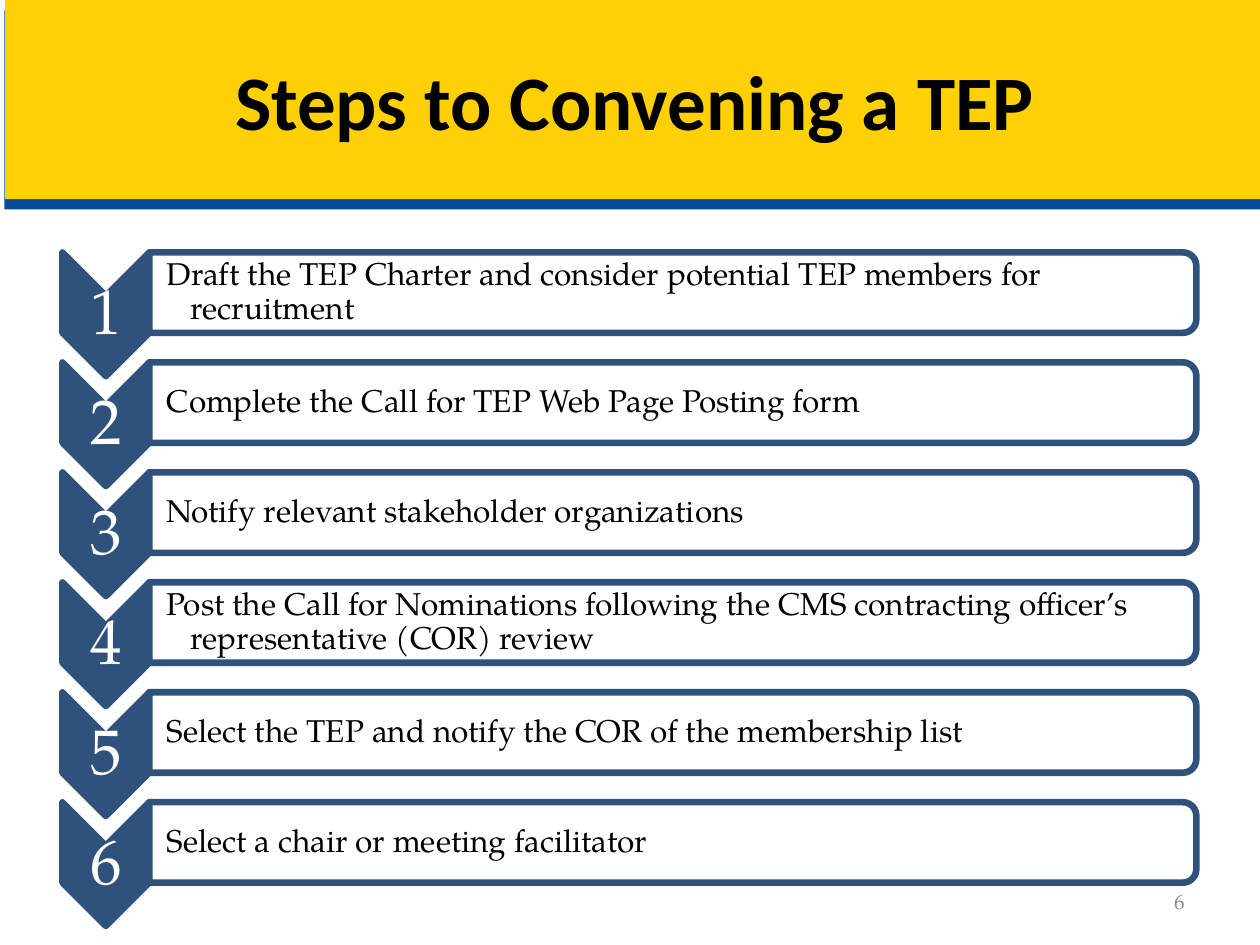
from lxml import etree
from pptx import Presentation
from pptx.dml.color import RGBColor
from pptx.enum import shapes, text
from pptx.oxml import ns
from pptx.util import Pt

YELLOW = RGBColor(0xFF, 0xD0, 0x04)
BLUE = RGBColor(0x08, 0x4A, 0x9C)
NAVY = RGBColor(0x2F, 0x52, 0x7D)
WHITE = RGBColor(0xFF, 0xFF, 0xFF)
BLACK = RGBColor(0, 0, 0)
GRAY = RGBColor(0x8C, 0x8C, 0x8C)
HEAD_FONT, BODY_FONT = "Calibri", "TeX Gyre Pagella"

STEPS = [
    "Draft the TEP Charter and consider potential TEP members for recruitment",
    "Complete the Call for TEP Web Page Posting form",
    "Notify relevant stakeholder organizations",
    "Post the Call for Nominations following the CMS contracting officer’s "
    "representative (COR) review",
    "Select the TEP and notify the COR of the membership list",
    "Select a chair or meeting facilitator",
]

# Step grid, in points
FIRST_BAR_CENTER, STEP_PITCH = 167.2, 62.84
CHEVRON_CENTER_X, CHEVRON_DROP = 60.5, 12.4
BAR_LEFT, BAR_LENGTH, BAR_HEIGHT = 85.3, 598.3, 46


def write_text(frame, content, size, color, font=BODY_FONT, bold=False,
               align=text.PP_ALIGN.LEFT, spacing=1.0, hanging=0,
               insets=(7.2, 3.6, 7.2, 3.6)):
    """Fill a text frame with one formatted paragraph."""
    frame.word_wrap = True
    frame.auto_size = text.MSO_AUTO_SIZE.NONE
    frame.vertical_anchor = text.MSO_ANCHOR.MIDDLE
    (frame.margin_left, frame.margin_top,
     frame.margin_right, frame.margin_bottom) = map(Pt, insets)
    paragraph = frame.paragraphs[0]
    paragraph.alignment = align
    paragraph.line_spacing = spacing
    if hanging:
        properties = paragraph._p.get_or_add_pPr()
        properties.set("marL", str(Pt(hanging)))
        properties.set("indent", str(-Pt(hanging)))
    run = paragraph.add_run()
    run.text = content
    run.font.name, run.font.size, run.font.bold = font, Pt(size), bold
    run.font.color.rgb = color


def add_label(slide, box, content, size, color, **fmt):
    label = slide.shapes.add_textbox(*map(Pt, box))
    write_text(label.text_frame, content, size, color, **fmt)


def add_turned_shape(slide, kind, center_x, center_y, width, height, fill):
    """Add a preset shape turned a quarter clockwise about its centre."""
    turned = slide.shapes.add_shape(
        kind, Pt(center_x - width / 2), Pt(center_y - height / 2),
        Pt(width), Pt(height))
    turned.rotation = 90
    turned.shadow.inherit = False
    turned.fill.solid()
    turned.fill.fore_color.rgb = fill
    turned.line.color.rgb = NAVY
    turned.line.width = Pt(3.78)


def add_title(slide, content):
    title = slide.shapes.title
    title.left, title.top, title.width, title.height = map(
        Pt, (2.88, 0, 720, 113.76))
    title.fill.solid()
    title.fill.fore_color.rgb = YELLOW
    write_text(title.text_frame, content, 44, BLACK, font=HEAD_FONT,
               bold=True, align=text.PP_ALIGN.CENTER)
    # Hard blue shadow that forms the stripe under the title
    effects = etree.SubElement(title._element.spPr, ns.qn("a:effectLst"))
    shadow = etree.SubElement(
        effects, ns.qn("a:outerShdw"), blurRad="0", dist=str(Pt(6)),
        dir=str(94 * 60000), algn="t", rotWithShape="0")
    etree.SubElement(shadow, ns.qn("a:srgbClr"), val=str(BLUE))


def add_step(slide, number, content):
    center_y = FIRST_BAR_CENTER + (number - 1) * STEP_PITCH
    chevron_y = center_y + CHEVRON_DROP
    # Numbered chevron
    add_turned_shape(slide, shapes.MSO_SHAPE.CHEVRON, CHEVRON_CENTER_X,
                     chevron_y, 70.6, 49.6, NAVY)
    add_label(slide, (CHEVRON_CENTER_X - 24.8, chevron_y - 10.4, 49.6, 20.8),
              str(number), 36, WHITE, align=text.PP_ALIGN.CENTER,
              spacing=0.9, insets=(2, 2, 2, 2))
    # Bar with its description
    add_turned_shape(slide, shapes.MSO_SHAPE.ROUND_2_SAME_RECTANGLE,
                     BAR_LEFT + BAR_LENGTH / 2, center_y,
                     BAR_HEIGHT, BAR_LENGTH, WHITE)
    add_label(slide, (BAR_LEFT, center_y - 20.75, 596, 41.5), content, 18,
              BLACK, spacing=0.9, hanging=13.5, insets=(10, 0.9, 0.9, 0.9))


def main():
    deck = Presentation()
    deck.slide_width, deck.slide_height = Pt(720), Pt(540)
    slide = deck.slides.add_slide(deck.slide_layouts[5])  # title only

    add_title(slide, "Steps to Convening a TEP")
    for number, content in enumerate(STEPS, start=1):
        add_step(slide, number, content)

    # Slide number
    add_label(slide, (516, 500.5, 168, 28.75), "6", 12, GRAY,
              align=text.PP_ALIGN.RIGHT)
    deck.save("out.pptx")


if __name__ == "__main__":
    main()
